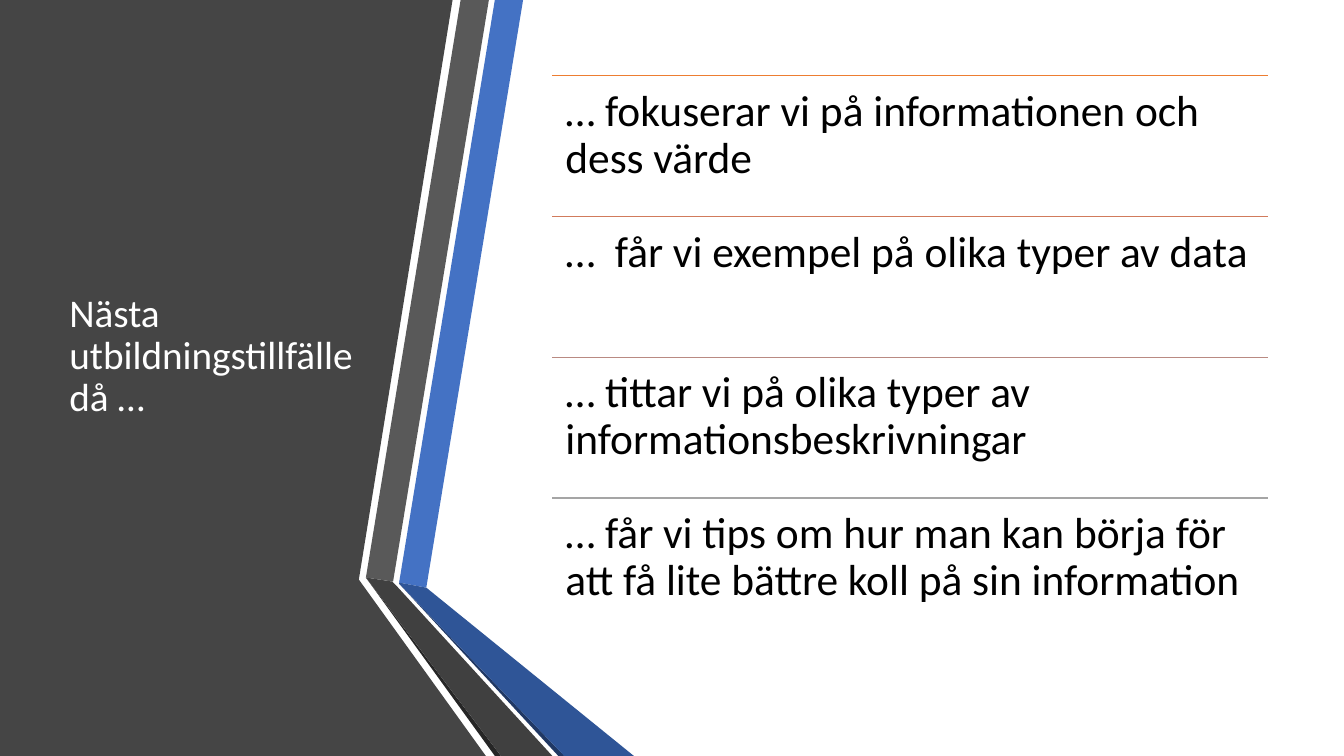
from lxml.etree import SubElement
from pptx import Presentation
from pptx.dml.color import RGBColor
from pptx.enum.shapes import MSO_CONNECTOR
from pptx.enum.text import MSO_ANCHOR, PP_ALIGN
from pptx.oxml.ns import qn
from pptx.util import Emu, Pt

PX = 9144  # EMU per px, 100 px to the inch
SLIDE_WIDTH, SLIDE_HEIGHT = Emu(12192000), Emu(6858000)

WHITE = RGBColor(0xFF, 0xFF, 0xFF)
BLACK = RGBColor(0x00, 0x00, 0x00)
PANEL_GRAY = RGBColor(0x45, 0x45, 0x45)
BAND_BLUE = RGBColor(0x44, 0x72, 0xC4)
BAND_GRAY = RGBColor(0x59, 0x59, 0x59)
EDGE_GRAY = RGBColor(0x26, 0x26, 0x26)
EDGE_BLUE = RGBColor(0x20, 0x38, 0x64)
FOLD_BLUE = RGBColor(0x2F, 0x55, 0x97)
FOLD_GRAY = RGBColor(0x40, 0x40, 0x40)
RULE_ORANGE = RGBColor(0xED, 0x7D, 0x31)
RULE_RUST = RGBColor(0xD1, 0x7B, 0x5C)
RULE_ROSE = RGBColor(0xB9, 0x8A, 0x82)
RULE_GRAY = RGBColor(0xA5, 0xA5, 0xA5)

TITLE = "Nästa utbildningstillfälle då …"
TITLE_BOX = (59, 75, 304, 558)
TOPICS = [
    ("… fokuserar vi på informationen och dess värde", RULE_ORANGE),
    ("…  får vi exempel på olika typer av data", RULE_RUST),
    ("… tittar vi på olika typer av informationsbeskrivningar", RULE_ROSE),
    ("… får vi tips om hur man kan börja för att få lite bättre koll på sin information",
     RULE_GRAY),
]
LIST_LEFT, LIST_TOP, LIST_WIDTH, LIST_HEIGHT = 548, 75, 710, 559

RIBBON = [
    (PANEL_GRAY, [(0, 0), (449, 0), (356, 575), (482, 750), (0, 750)]),
    (BAND_BLUE, [(396, 578), (423, 583), (519, 0), (491, 0)]),
    (BAND_GRAY, [(485, 0), (457, 0), (363, 573), (390, 577)]),
    (EDGE_GRAY, [(363, 573), (491, 750), (497, 750)]),
    (EDGE_BLUE, [(396, 579), (554, 750), (560, 750)]),
    (FOLD_BLUE, [(396, 579), (560, 750), (629, 750), (423, 583), (396, 578)]),
    (FOLD_GRAY, [(548, 750), (395, 583), (389, 577), (363, 573), (497, 750)]),
]

TITLE_FONT = {"name": "Calibri", "size": Pt(28)}
TOPIC_FONT = {"name": "Calibri", "size": Pt(31)}


def add_polygon(slide, color, points):
    builder = slide.shapes.build_freeform(*points[0], scale=PX)
    builder.add_line_segments(points[1:], close=True)
    shape = builder.convert_to_shape()
    shape.shadow.inherit = False
    shape.fill.solid()
    shape.fill.fore_color.rgb = color
    shape.line.fill.background()


def add_text(slide, box, text, font_format, color, inset, anchor):
    """Add a wrapped text box; inset is (horizontal, vertical) in px."""
    shape = slide.shapes.add_textbox(*(Emu(round(length * PX)) for length in box))
    across, down = (Emu(length * PX) for length in inset)
    frame_format = {
        "word_wrap": True, "vertical_anchor": anchor,
        "margin_left": across, "margin_right": across,
        "margin_top": down, "margin_bottom": down,
    }
    for name, value in frame_format.items():
        setattr(shape.text_frame, name, value)
    paragraph = shape.text_frame.paragraphs[0]
    paragraph.alignment = PP_ALIGN.LEFT
    paragraph.line_spacing = 0.9
    run = paragraph.add_run()
    run.text = text
    for name, value in font_format.items():
        setattr(run.font, name, value)
    run.font.color.rgb = color


def add_rule(slide, left, top, width, color):
    ends = (left, top, left + width, top)
    rule = slide.shapes.add_connector(
        MSO_CONNECTOR.STRAIGHT, *(Emu(round(length * PX)) for length in ends))
    rule.line.color.rgb = color
    rule.line.width = Pt(1)
    SubElement(rule._element.spPr, qn("a:effectLst"))


def main():
    presentation = Presentation()
    presentation.slide_width, presentation.slide_height = SLIDE_WIDTH, SLIDE_HEIGHT
    slide = presentation.slides.add_slide(presentation.slide_layouts[6])

    for color, points in RIBBON:
        add_polygon(slide, color, points)
    add_text(slide, TITLE_BOX, TITLE, TITLE_FONT, WHITE, (10, 5), MSO_ANCHOR.MIDDLE)

    row_height = LIST_HEIGHT / len(TOPICS)
    for index, (text, color) in enumerate(TOPICS):
        top = LIST_TOP + index * row_height
        add_rule(slide, LIST_LEFT, top, LIST_WIDTH, color)
        add_text(slide, (LIST_LEFT, top, LIST_WIDTH, row_height), text,
                 TOPIC_FONT, BLACK, (13, 13), MSO_ANCHOR.TOP)

    presentation.save("out.pptx")


if __name__ == "__main__":
    main()
